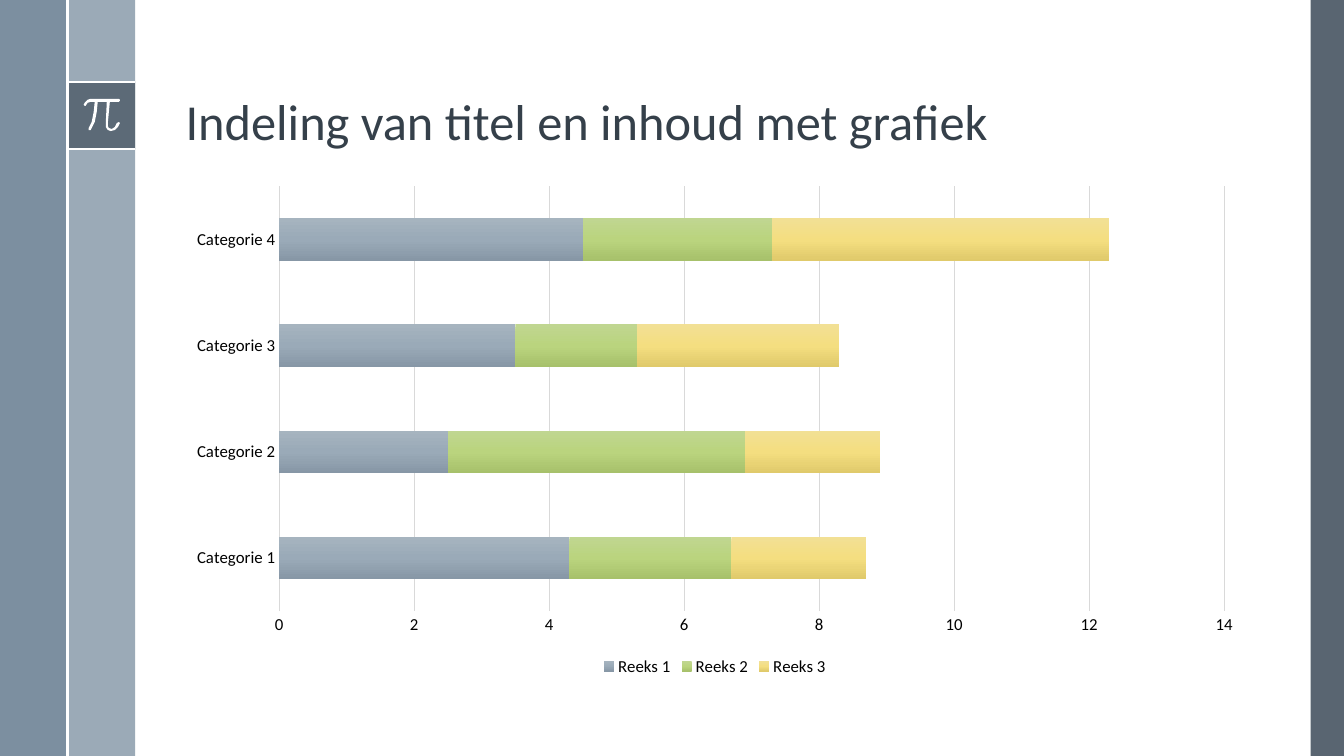
from copy import deepcopy

from lxml import etree
from pptx import Presentation
from pptx.chart.data import CategoryChartData
from pptx.dml.color import RGBColor
from pptx.enum.chart import XL_CHART_TYPE, XL_LEGEND_POSITION, XL_TICK_MARK
from pptx.enum.shapes import MSO_CONNECTOR, MSO_SHAPE
from pptx.enum.text import MSO_ANCHOR, PP_ALIGN
from pptx.oxml.ns import qn
from pptx.util import Inches, Pt

RECT = MSO_SHAPE.RECTANGLE
STRAIGHT = MSO_CONNECTOR.STRAIGHT
STACKED = XL_CHART_TYPE.BAR_STACKED
BOTTOM = XL_LEGEND_POSITION.BOTTOM
NO_TICK = XL_TICK_MARK.NONE

WHITE = RGBColor(0xFF, 0xFF, 0xFF)
BLACK = RGBColor(0, 0, 0)
INK = RGBColor(0x35, 0x40, 0x4A)
DARK = RGBColor(0x47, 0x55, 0x62)
STEEL = RGBColor(0x6A, 0x80, 0x93)
PALE = RGBColor(0x9B, 0xAA, 0xB7)
GRID = RGBColor(0xD9, 0xD9, 0xD9)
BLUES = RGBColor(0xA6, 0xB4, 0xBF), RGBColor(0x9A, 0xAA, 0xB8), RGBColor(0x87, 0x97, 0xA6)
GREENS = RGBColor(0xC0, 0xD6, 0x91), RGBColor(0xBA, 0xD4, 0x7E), RGBColor(0xA7, 0xC1, 0x6B)
GOLDS = RGBColor(0xF2, 0xE0, 0x95), RGBColor(0xF4, 0xDE, 0x80), RGBColor(0xE0, 0xCA, 0x6B)

FONT = "Calibri"
WIDTH, HEIGHT = 13.33, 7.5
BAND = 0.67
LEFT, SPAN = 1.74, 10.7

CATS = [f"Categorie {n}" for n in range(1, 5)]
SERIES = [
    ("Reeks 1", (4.3, 2.5, 3.5, 4.5), BLUES),
    ("Reeks 2", (2.4, 4.4, 1.8, 2.8), GREENS),
    ("Reeks 3", (2, 2, 3, 5), GOLDS),
]

# Outline of the pi sign, in inches from the corner of its tile
PI = [
    (0.51, 0.17), (0.23, 0.17), (0.2, 0.18), (0.17, 0.21), (0.16, 0.23),
    (0.17, 0.24), (0.18, 0.24), (0.2, 0.21), (0.23, 0.2), (0.27, 0.2),
    (0.26, 0.3), (0.24, 0.4), (0.21, 0.46), (0.21, 0.48), (0.23, 0.48),
    (0.27, 0.4), (0.29, 0.3), (0.3, 0.2), (0.39, 0.2), (0.38, 0.41),
    (0.38, 0.45), (0.4, 0.48), (0.43, 0.49), (0.47, 0.48), (0.5, 0.45),
    (0.52, 0.41), (0.51, 0.4), (0.49, 0.41), (0.47, 0.45), (0.44, 0.47),
    (0.41, 0.46), (0.4, 0.44), (0.4, 0.41), (0.42, 0.2), (0.51, 0.2),
    (0.52, 0.19), (0.52, 0.18),
]


def style(item, **values):
    for name, value in values.items():
        setattr(item, name, value)


def paint(shape, color, alpha=100):
    """Fill a shape flat, with alpha as a percentage of opacity."""
    shape.shadow.inherit = False
    shape.line.fill.background()
    shape.fill.solid()
    shape.fill.fore_color.rgb = color
    if alpha < 100:
        tint = shape.fill._xPr.find(".//" + qn("a:srgbClr"))
        etree.SubElement(tint, qn("a:alpha"), val=str(alpha * 1000))


def add_rect(slide, box, color, alpha=100):
    shape = slide.shapes.add_shape(RECT, *map(Inches, box))
    paint(shape, color, alpha)


def add_rule(slide, *ends):
    rule = slide.shapes.add_connector(STRAIGHT, *map(Inches, ends))
    rule.line.color.rgb = WHITE
    rule.line.width = Pt(1.5)
    etree.SubElement(rule._element.spPr, qn("a:effectLst"))


def add_bands(slide):
    add_rect(slide, (13, 0, 0.33, HEIGHT), DARK, 90)
    add_rect(slide, (BAND, 0, BAND, HEIGHT), PALE)
    add_rect(slide, (0, 0, BAND, HEIGHT), STEEL, 88)


def add_tile(slide, left, top, side):
    """Dark square with a pi sign, ruled above and below."""
    add_rect(slide, (left, top, side, side), DARK, 75)
    for y in (top, top + side):
        add_rule(slide, left, y, left + side, y)
    dots = [(Inches(left + x), Inches(top + y)) for x, y in PI]
    form = slide.shapes.build_freeform(*dots[0])
    form.add_line_segments(dots[1:], close=True)
    paint(form.convert_to_shape(), WHITE)
    add_rule(slide, left, 0, left, HEIGHT)


def add_title(slide, left, top, width, height):
    title = slide.shapes.title
    style(title, left=Inches(left), top=Inches(top),
          width=Inches(width), height=Inches(height))
    frame = title.text_frame
    frame.text = "Indeling van titel en inhoud met grafiek"
    frame.vertical_anchor = MSO_ANCHOR.BOTTOM
    line = frame.paragraphs[0]
    style(line, alignment=PP_ALIGN.LEFT, line_spacing=0.9)
    font = line.runs[0].font
    style(font, name=FONT, size=Pt(36))
    font.color.rgb = INK


def shade(series, colors):
    """Fill the bars from top to bottom through three colours."""
    fill = series.format.fill
    fill.gradient()
    fill.gradient_angle = 270
    stops = series._element.find(".//" + qn("a:gsLst"))
    stops.append(deepcopy(stops[0]))
    for stop, color, place in zip(fill.gradient_stops, colors, (0, 0.5, 1)):
        stop.color.rgb = color
        stop.position = place


def add_bars(slide, *box):
    data = CategoryChartData()
    data.categories = CATS
    for name, values, _ in SERIES:
        data.add_series(name, values)
    chart = slide.shapes.add_chart(STACKED, *map(Inches, box), data).chart
    style(chart, has_title=False, has_legend=True)
    style(chart.font, name=FONT, size=Pt(12))
    chart.font.color.rgb = BLACK
    style(chart.legend, position=BOTTOM, include_in_layout=False)

    plot = chart.plots[0]
    style(plot, gap_width=150, overlap=100, vary_by_categories=False)
    for series, (_, _, colors) in zip(plot.series, SERIES):
        shade(series, colors)

    cat, val = chart.category_axis, chart.value_axis
    for axis in (cat, val):
        style(axis, major_tick_mark=NO_TICK, minor_tick_mark=NO_TICK)
    style(val, minimum_scale=0, maximum_scale=14, major_unit=2,
          has_major_gridlines=True)
    val.format.line.fill.background()
    for line in (cat.format.line, val.major_gridlines.format.line):
        line.color.rgb = GRID
        line.width = Pt(0.75)


def main():
    deck = Presentation()
    style(deck, slide_width=Inches(WIDTH), slide_height=Inches(HEIGHT))
    slide = deck.slides.add_slide(deck.slide_layouts.get_by_name("Title Only"))
    add_bands(slide)
    add_tile(slide, BAND, 0.81, BAND)
    add_title(slide, LEFT, 0.19, SPAN, 1.36)
    add_bars(slide, LEFT, 1.75, SPAN, 5)
    deck.save("out.pptx")


if __name__ == "__main__":
    main()
